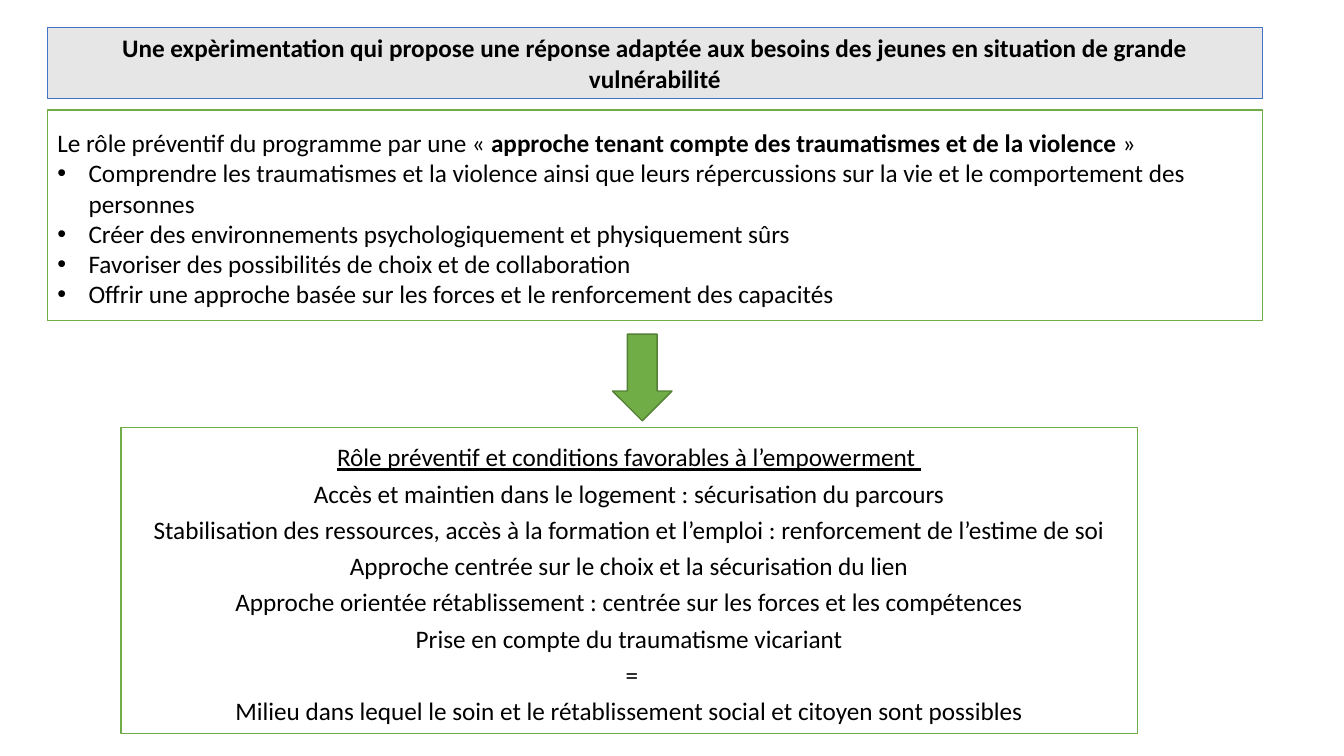
from pptx import Presentation
from pptx.dml.color import RGBColor
from pptx.enum.shapes import MSO_SHAPE as Preset
from pptx.enum.text import MSO_ANCHOR as Anchor, PP_ALIGN as Align
from pptx.oxml.ns import qn
from pptx.util import Inches, Pt
from lxml.etree import SubElement

COLOURS = {"text": "000000", "white": "FFFFFF", "grey": "E7E6E6",
           "blue": "4472C4", "green": "70AD47", "dark_green": "538035"}

PLAIN, BOLD, UNDERLINED = {}, {"bold": True}, {"underline": True}
CENTRED = {"alignment": Align.CENTER}
CENTRED_LOOSE = {"alignment": Align.CENTER, "line_spacing": 1.2}
LEFT = {"alignment": Align.LEFT}
LEFT_LOOSE = {"alignment": Align.LEFT, "line_spacing": 1.2}
BULLET_INDENT = 0.31

TITLE = [("Une expèrimentation qui propose une réponse adaptée aux besoins des jeunes "
          "en situation de grande vulnérabilité", BOLD)]
APPROACH = [
    ("Le rôle préventif du programme par une « ", PLAIN),
    ("approche tenant compte des traumatismes et de la violence", BOLD),
    (" »", PLAIN),
]
PRINCIPLES = [
    "Comprendre les traumatismes et la violence ainsi que leurs répercussions sur la vie "
    "et le comportement des personnes",
    "Créer des environnements psychologiquement et physiquement sûrs",
    "Favoriser des possibilités de choix et de collaboration",
    "Offrir une approche basée sur les forces et le renforcement des capacités",
]
EMPOWERMENT = [("Rôle préventif et conditions favorables à l’empowerment ", UNDERLINED)]
CONDITIONS = [
    "Accès et maintien dans le logement : sécurisation du parcours",
    "Stabilisation des ressources, accès à la formation et l’emploi : "
    "renforcement de l’estime de soi",
    "Approche centrée sur le choix et la sécurisation du lien",
    "Approche orientée rétablissement : centrée sur les forces et les compétences",
    "Prise en compte du traumatisme vicariant",
    " =",
    "Milieu dans lequel le soin et le rétablissement social et citoyen sont possibles",
]

PANELS = [
    {"at": (0.47, 0.27, 12.05, 0.71), "fill": "grey", "line": "blue",
     "heading": TITLE, "heading_format": CENTRED,
     "items": [], "item_format": CENTRED, "bullets": False},
    {"at": (0.47, 1.09, 12.05, 2.09), "fill": "white", "line": "green",
     "heading": APPROACH, "heading_format": LEFT_LOOSE,
     "items": PRINCIPLES, "item_format": LEFT, "bullets": True},
    {"at": (1.2, 4.24, 10.08, 3.04), "fill": "white", "line": "green",
     "heading": EMPOWERMENT, "heading_format": CENTRED_LOOSE,
     "items": CONDITIONS, "item_format": CENTRED_LOOSE, "bullets": False},
]
ARROW = {"at": (5.94, 3.45, 0.86, 0.59), "fill": "green", "line": "dark_green"}


def colour(name):
    return RGBColor.from_string(COLOURS[name])


def apply(target, values):
    for attribute, value in values.items():
        setattr(target, attribute, value)


def add_block(slide, preset, block):
    shape = slide.shapes.add_shape(preset, *map(Inches, block["at"]))
    shape.shadow.inherit = False
    shape.fill.solid()
    shape.fill.fore_color.rgb = colour(block["fill"])
    shape.line.color.rgb = colour(block["line"])
    shape.line.width = Pt(1)
    return shape


def fill_paragraph(paragraph, runs, layout):
    apply(paragraph, layout)
    for words, style in runs:
        run = paragraph.add_run()
        run.text = words
        apply(run.font, {"name": "Calibri", "size": Pt(18), **style})
        run.font.color.rgb = colour("text")


def add_bullet(paragraph):
    properties = paragraph._p.get_or_add_pPr()
    properties.set("marL", str(Inches(BULLET_INDENT)))
    properties.set("indent", str(-Inches(BULLET_INDENT)))
    SubElement(properties, qn("a:buFont")).set("typeface", "Arial")
    SubElement(properties, qn("a:buChar")).set("char", "•")


def add_panel(slide, panel):
    frame = add_block(slide, Preset.RECTANGLE, panel).text_frame
    apply(frame, {"word_wrap": True, "vertical_anchor": Anchor.MIDDLE})
    fill_paragraph(frame.paragraphs[0], panel["heading"], panel["heading_format"])
    for item in panel["items"]:
        paragraph = frame.add_paragraph()
        fill_paragraph(paragraph, [(item, PLAIN)], panel["item_format"])
        if panel["bullets"]:
            add_bullet(paragraph)


def main():
    deck = Presentation()
    apply(deck, {"slide_width": Inches(13.33), "slide_height": Inches(7.5)})
    slide = deck.slides.add_slide(deck.slide_layouts[6])
    for panel in PANELS:
        add_panel(slide, panel)
    add_block(slide, Preset.RIGHT_ARROW, ARROW).rotation = 90
    deck.save("out.pptx")


if __name__ == "__main__":
    main()
